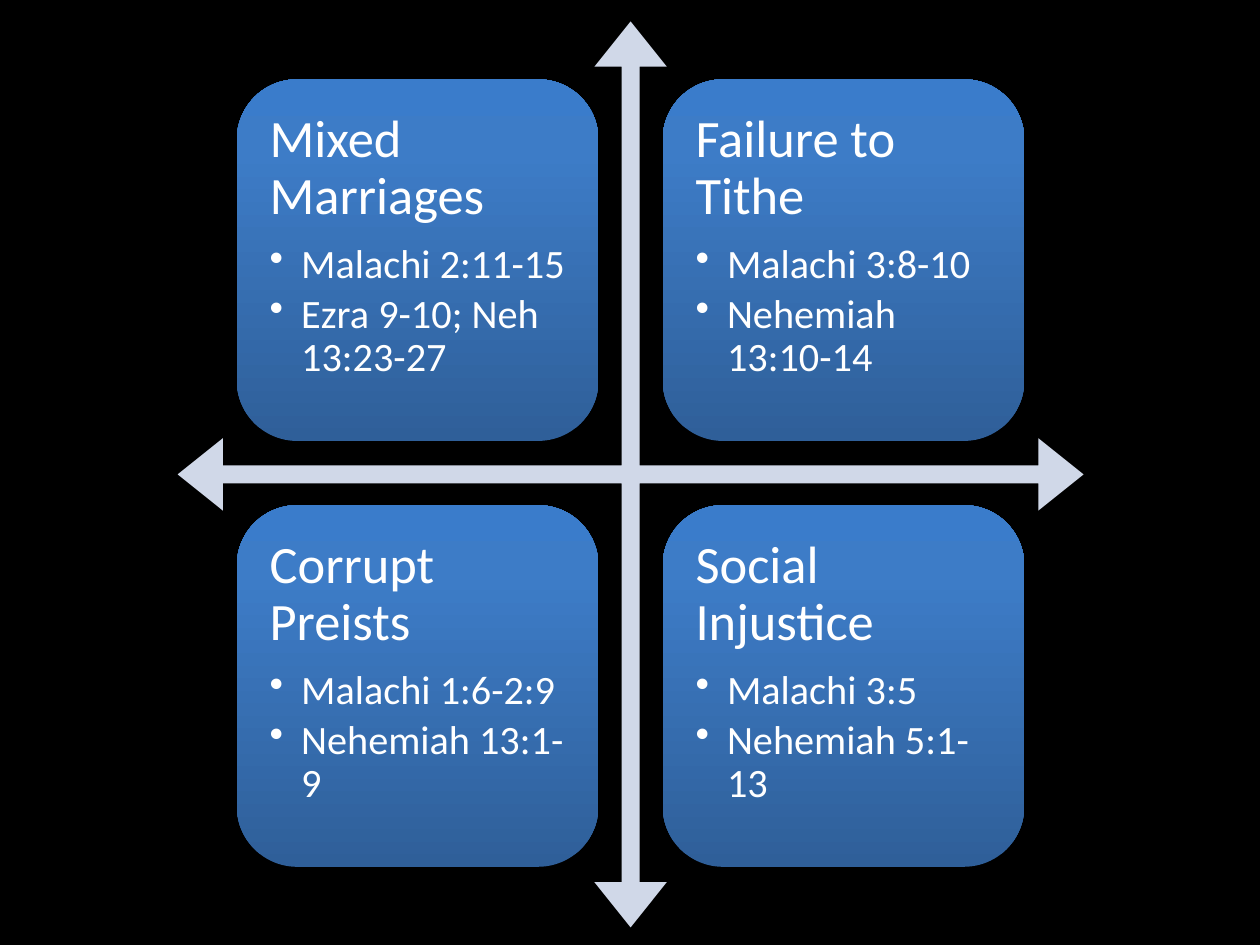
from lxml import etree
from pptx import Presentation
from pptx.dml.color import RGBColor
from pptx.enum import shapes, text
from pptx.oxml.ns import qn
from pptx.util import Inches, Pt

SHAPE = shapes.MSO_SHAPE
STOPS = [(0, "2F5F99"), (80, "3D7CC7"), (100, "3A7CCB")]
CARDS = [
    ("Mixed Marriages", ["Malachi 2:11-15", "Ezra 9-10; Neh 13:23-27"]),
    ("Failure to Tithe", ["Malachi 3:8-10", "Nehemiah 13:10-14"]),
    ("Corrupt Preists", ["Malachi 1:6-2:9", "Nehemiah 13:1-9"]),
    ("Social Injustice", ["Malachi 3:5", "Nehemiah 5:1-13"]),
]


def color(code):
    return RGBColor.from_string(code)


def add_shape(slide, kind, left, top, size):
    shape = slide.shapes.add_shape(
        kind, Inches(left), Inches(top), Inches(size), Inches(size))
    shape.shadow.inherit = False
    shape.line.fill.background()
    return shape


def shade(shape):
    shape.fill.gradient()
    shape.fill.gradient_angle = 90
    stops = next(shape.element.spPr.iter(qn("a:gsLst")))
    for stop in list(stops):
        stops.remove(stop)
    for place, code in STOPS:
        stop = etree.SubElement(stops, qn("a:gs"), pos=str(place * 1000))
        etree.SubElement(stop, qn("a:srgbClr"), val=code)


def add_line(para, words, size, after):
    para.line_spacing = 0.9
    para.space_after = Pt(after)
    run = para.add_run()
    run.text = words
    run.font.size = Pt(size)
    run.font.name = "Calibri"
    run.font.color.rgb = color("FFFFFF")


def add_bullet(para):
    props = para._p.get_or_add_pPr()
    props.set("marL", str(Inches(0.25)))
    props.set("indent", str(-Inches(0.25)))
    etree.SubElement(props, qn("a:buChar"), char="•")


def add_card(slide, left, top, size, title, verses):
    shade(add_shape(slide, SHAPE.ROUNDED_RECTANGLE, left, top, size))
    inset = 0.14
    side = Inches(size - 2 * inset)
    box = slide.shapes.add_textbox(
        Inches(left + inset), Inches(top + inset), side, side)
    frame = box.text_frame
    frame.word_wrap = True
    frame.vertical_anchor = text.MSO_ANCHOR.TOP
    frame.margin_left = frame.margin_right = Inches(0.12)
    frame.margin_top = frame.margin_bottom = Inches(0.12)
    add_line(frame.paragraphs[0], title, 30, 10.5)
    for verse in verses:
        para = frame.add_paragraph()
        para.level = 1
        add_line(para, verse, 23, 3.45)
        add_bullet(para)


def add_matrix(slide, left, top, size):
    arrow = add_shape(slide, SHAPE.QUAD_ARROW, left, top, size)
    for index, value in enumerate([0.02, 0.04, 0.05]):
        arrow.adjustments[index] = value
    arrow.fill.solid()
    arrow.fill.fore_color.rgb = color("D0D8E8")
    for index, (title, verses) in enumerate(CARDS):
        row, col = divmod(index, 2)
        add_card(slide, left + 0.47 + col * 3.38, top + 0.46 + row * 3.38,
                 2.87, title, verses)


def main():
    deck = Presentation()
    deck.slide_width, deck.slide_height = Inches(10), Inches(7.5)
    slide = deck.slides.add_slide(deck.slide_layouts[6])
    slide.background.fill.solid()
    slide.background.fill.fore_color.rgb = color("000000")
    add_matrix(slide, 1.41, 0.17, 7.19)
    deck.save("out.pptx")


if __name__ == "__main__":
    main()
